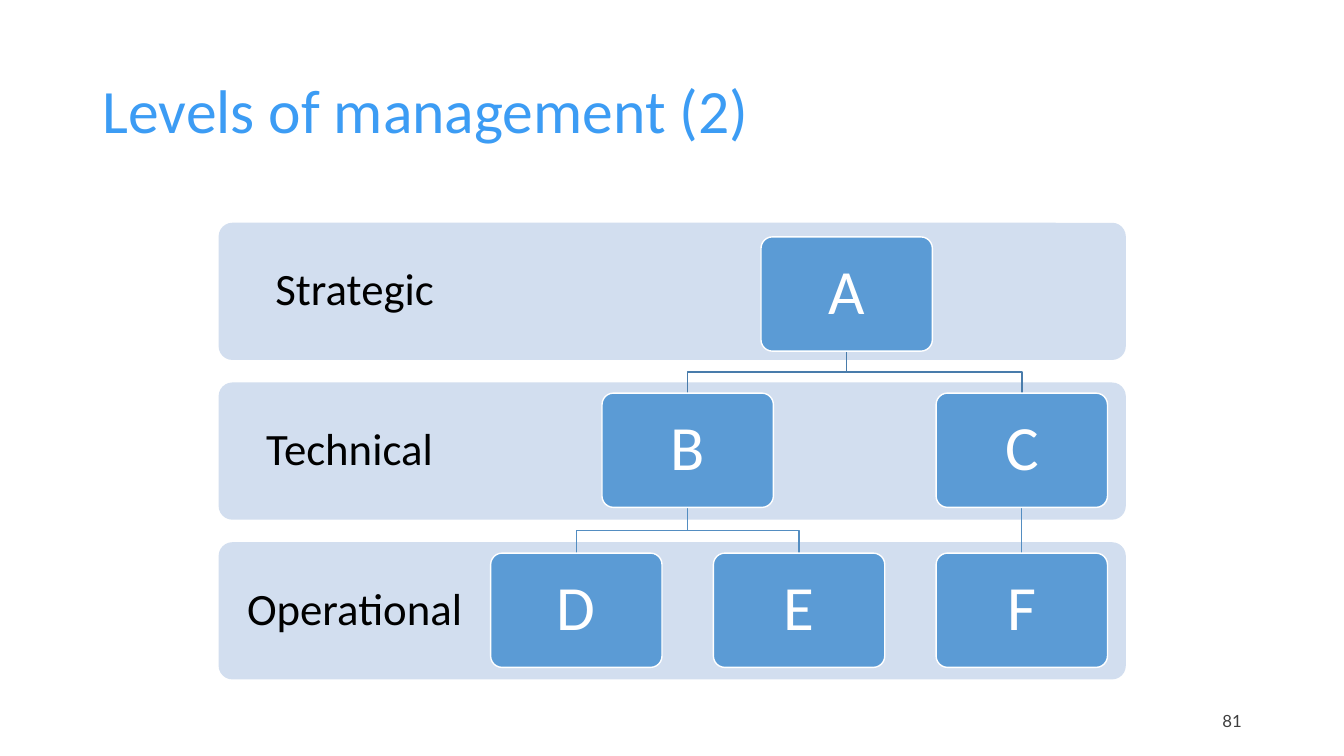
from typing import NamedTuple

from pptx import Presentation
from pptx import util as u
from pptx.dml import color
from pptx.enum import shapes, text

HUES = {
    "title": "3C9CF4",
    "band": "D2DEEF",
    "box": "5B9BD5",
    "edge": "FFFFFF",
    "ink": "000000",
    "page": "3F3F3F",
    "high": "497CAB",
    "low": "538DC1",
}
LEFT, TOP, STEP = 156.2, 159.1, 114.1
WIDE, HIGH = 648, 98
BOX_W, BOX_H = 122.4, 81.6
GRID, GAP = 350.5, 159.1
ROWS = (169.2, 280.8, 395.1)


class Node(NamedTuple):
    name: str
    left: float
    row: int

    @property
    def mid(self) -> float:
        return self.left + BOX_W / 2

    @property
    def top(self) -> float:
        return ROWS[self.row]

    @property
    def base(self) -> float:
        return self.top + BOX_H


class Label(NamedTuple):
    words: str
    left: float
    top: float
    width: float
    height: float
    size: float
    hue: str
    face: str = "Calibri"
    align: text.PP_ALIGN = text.PP_ALIGN.CENTER
    inset: float = 7.2
    lead: float = 0.9


NODES = {
    node.name: node
    for node in (
        Node("A", 543.6, 0),
        Node("B", GRID + GAP / 2, 1),
        Node("C", GRID + 2 * GAP, 1),
        Node("D", GRID, 2),
        Node("E", GRID + GAP, 2),
        Node("F", GRID + 2 * GAP, 2),
    )
}
LINKS = ("AB", "AC", "BD", "BE", "CF")
LEVELS = ("Strategic", "Technical ", "Operational ")
LABELS = [
    Label("Levels of management (2)", 66.2, 28.8, 828, 104.4, 44, "title",
          align=text.PP_ALIGN.LEFT),
    Label("81", 678.2, 500.4, 216, 28.8, 12, "page", "Lato",
          text.PP_ALIGN.RIGHT, lead=1),
] + [
    Label(words, LEFT, TOP + row * STEP, 194.4, HIGH, 32, "ink", inset=18)
    for row, words in enumerate(LEVELS)
]


def tint(name: str) -> color.RGBColor:
    return color.RGBColor.from_string(HUES[name])


def write(shape, item: Label) -> None:
    frame = shape.text_frame
    frame.word_wrap = True
    frame.vertical_anchor = text.MSO_ANCHOR.MIDDLE
    frame.margin_left = frame.margin_right = u.Pt(item.inset)
    frame.margin_top = frame.margin_bottom = u.Pt(item.inset)
    line = frame.paragraphs[0]
    line.text = item.words
    line.alignment = item.align
    line.line_spacing = item.lead
    line.font.name = item.face
    line.font.size = u.Pt(item.size)
    line.font.color.rgb = tint(item.hue)


def panel(slide, left: float, top: float, width: float, height: float, hue: str):
    shape = slide.shapes.add_shape(
        shapes.MSO_SHAPE.ROUNDED_RECTANGLE,
        u.Pt(left), u.Pt(top), u.Pt(width), u.Pt(height))
    shape.adjustments[0] = 0.1
    shape.shadow.inherit = False
    shape.fill.solid()
    shape.fill.fore_color.rgb = tint(hue)
    shape.line.fill.background()
    return shape


def draw_label(slide, item: Label) -> None:
    shape = slide.shapes.add_textbox(
        u.Pt(item.left), u.Pt(item.top), u.Pt(item.width), u.Pt(item.height))
    write(shape, item)


def draw_link(slide, head: Node, child: Node) -> None:
    half = (head.base + child.top) / 2
    spots = [(head.mid, head.base), (head.mid, half),
             (child.mid, half), (child.mid, child.top)]
    if head.mid == child.mid:
        spots = [spots[0], spots[-1]]
    points = [(u.Pt(x), u.Pt(y)) for x, y in spots]
    pen = slide.shapes.build_freeform(*points[0])
    pen.add_line_segments(points[1:], close=False)
    shape = pen.convert_to_shape()
    shape.shadow.inherit = False
    shape.fill.background()
    shape.line.color.rgb = tint("low" if head.row else "high")
    shape.line.width = u.Pt(1)


def draw_node(slide, node: Node) -> None:
    shape = panel(slide, node.left, node.top, BOX_W, BOX_H, "box")
    shape.line.color.rgb = tint("edge")
    shape.line.width = u.Pt(1)
    write(shape, Label(node.name, node.left, node.top, BOX_W, BOX_H, 45,
                       "edge", inset=16))


def main() -> None:
    deck = Presentation()
    deck.slide_width, deck.slide_height = u.Pt(960), u.Pt(540)
    slide = deck.slides.add_slide(deck.slide_layouts[6])
    for row in range(len(LEVELS)):
        panel(slide, LEFT, TOP + row * STEP, WIDE, HIGH, "band")
    for item in LABELS:
        draw_label(slide, item)
    for head, child in LINKS:
        draw_link(slide, NODES[head], NODES[child])
    for node in NODES.values():
        draw_node(slide, node)
    deck.save("out.pptx")


if __name__ == "__main__":
    main()
